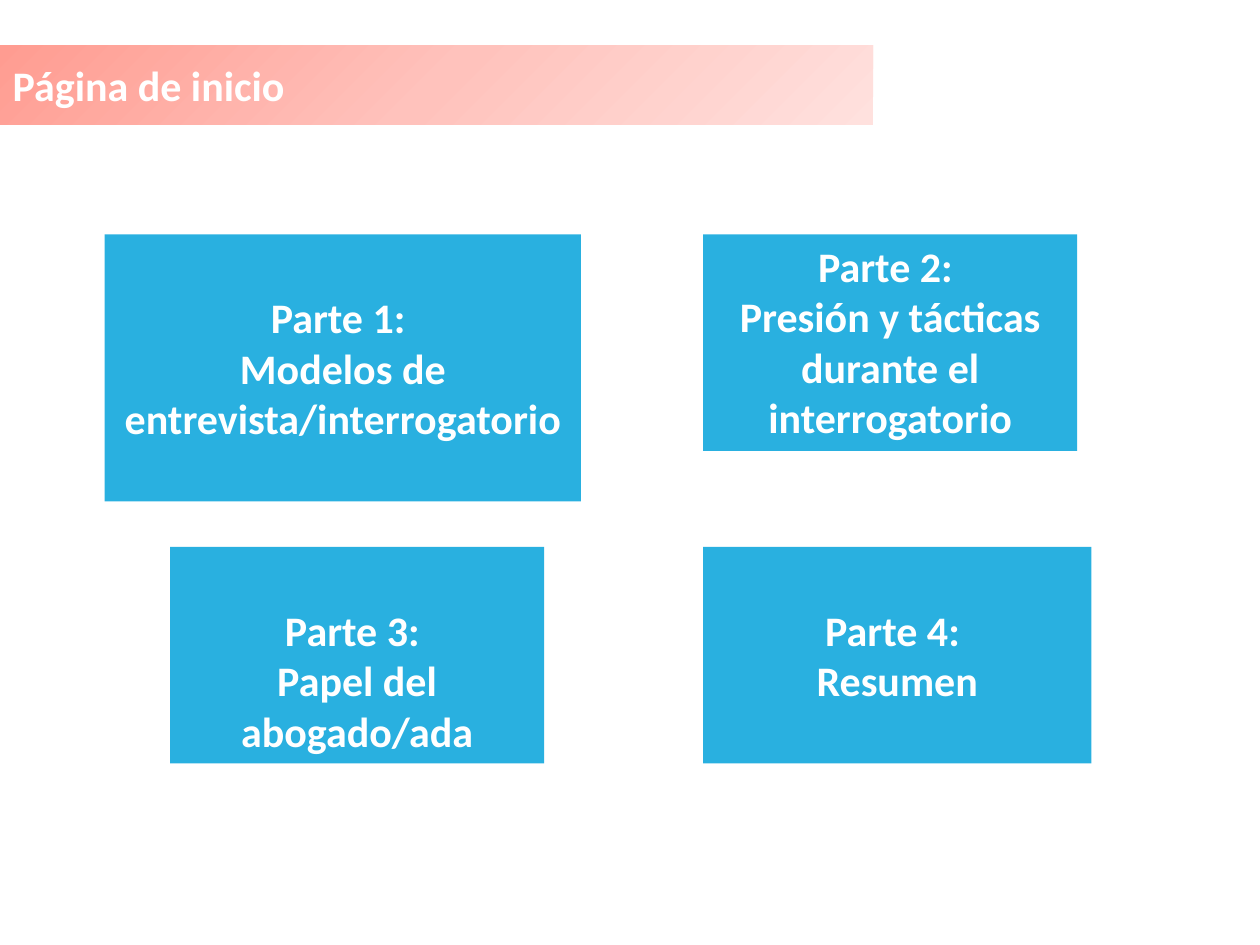
import dataclasses

import pptx
import pptx.dml.color
import pptx.enum.shapes
import pptx.enum.text
import pptx.oxml
import pptx.oxml.ns
import pptx.util

Pt = pptx.util.Pt

COLORS = {
    "banner_start": "FF9C91",
    "banner_middle": "FFC2BC",
    "banner_end": "FFE1DE",
    "part": "00A2DB",
    "text": "FFFFFF",
}
FONT = "Calibri"
FONT_SIZE = 24
LINE_HEIGHT = 29.3
TOP_INSET = 3.6
PART_ALPHA = 84000
ROW_TOPS = (133.9, 312.5)
RIGHT_COLUMN = 401.8
PART_HEIGHT = 123.8


@dataclasses.dataclass(frozen=True)
class Part:
    heading: str
    topic: str
    left: float
    top: float
    width: float
    height: float = PART_HEIGHT
    lines_above: int = 1


PARTS = [
    Part("Parte 1: ", "Modelos de entrevista/interrogatorio", 59.8, ROW_TOPS[0], 272.2, 152.6),
    Part("Parte 2: ", "Presión y tácticas durante el interrogatorio",
         RIGHT_COLUMN, ROW_TOPS[0], 213.8, lines_above=0),
    Part("Parte 3: ", "Papel del abogado/ada", 97.2, ROW_TOPS[1], 213.8),
    Part("Parte 4: ", "Resumen", RIGHT_COLUMN, ROW_TOPS[1], 221.8),
]


def format_text(frame, alignment, anchor) -> None:
    frame.word_wrap = True
    frame.auto_size = pptx.enum.text.MSO_AUTO_SIZE.NONE
    frame.vertical_anchor = anchor
    for paragraph in frame.paragraphs:
        paragraph.alignment = alignment
        paragraph.font.name = FONT
        paragraph.font.size = Pt(FONT_SIZE)
        paragraph.font.bold = True
        paragraph.font.color.rgb = pptx.dml.color.RGBColor.from_string(COLORS["text"])


def draw_banner(slide, text: str) -> None:
    banner = slide.shapes.title
    banner.left, banner.top, banner.width, banner.height = Pt(0), Pt(25.9), Pt(499), Pt(45.4)
    namespace = pptx.oxml.ns.nsdecls("a")
    stops = "".join(
        f'<a:gs pos="{position}"><a:srgbClr val="{COLORS[name]}"/></a:gs>'
        for position, name in ((0, "banner_start"), (50000, "banner_middle"), (100000, "banner_end"))
    )
    outline = f'<a:prstGeom {namespace} prst="homePlate"><a:avLst/></a:prstGeom>'
    gradient = (
        f'<a:gradFill {namespace} rotWithShape="1"><a:gsLst>{stops}</a:gsLst>'
        '<a:path path="circle"><a:fillToRect r="100000" b="100000"/></a:path></a:gradFill>'
    )
    for xml in (outline, gradient):
        banner.element.spPr.append(pptx.oxml.parse_xml(xml))
    banner.text_frame.text = text
    format_text(banner.text_frame, pptx.enum.text.PP_ALIGN.LEFT, pptx.enum.text.MSO_ANCHOR.MIDDLE)


def draw_part(slide, part: Part) -> None:
    box = slide.shapes.add_shape(
        pptx.enum.shapes.MSO_SHAPE.RECTANGLE,
        Pt(part.left), Pt(part.top), Pt(part.width), Pt(part.height),
    )
    box.shadow.inherit = False
    box.line.fill.background()
    box.fill.solid()
    box.fill.fore_color.rgb = pptx.dml.color.RGBColor.from_string(COLORS["part"])
    alpha = pptx.oxml.parse_xml(f'<a:alpha {pptx.oxml.ns.nsdecls("a")} val="{PART_ALPHA}"/>')
    box.element.spPr.find(".//" + pptx.oxml.ns.qn("a:srgbClr")).append(alpha)
    box.text_frame.text = f"{part.heading}\n{part.topic}"
    box.text_frame.margin_top = Pt(TOP_INSET + part.lines_above * LINE_HEIGHT)
    format_text(box.text_frame, pptx.enum.text.PP_ALIGN.CENTER, pptx.enum.text.MSO_ANCHOR.TOP)


def main() -> None:
    presentation = pptx.Presentation()
    presentation.slide_width, presentation.slide_height = Pt(720), Pt(540)
    slide = presentation.slides.add_slide(presentation.slide_layouts.get_by_name("Title Only"))
    draw_banner(slide, "Página de inicio")
    for part in PARTS:
        draw_part(slide, part)
    presentation.save("out.pptx")


if __name__ == "__main__":
    main()
